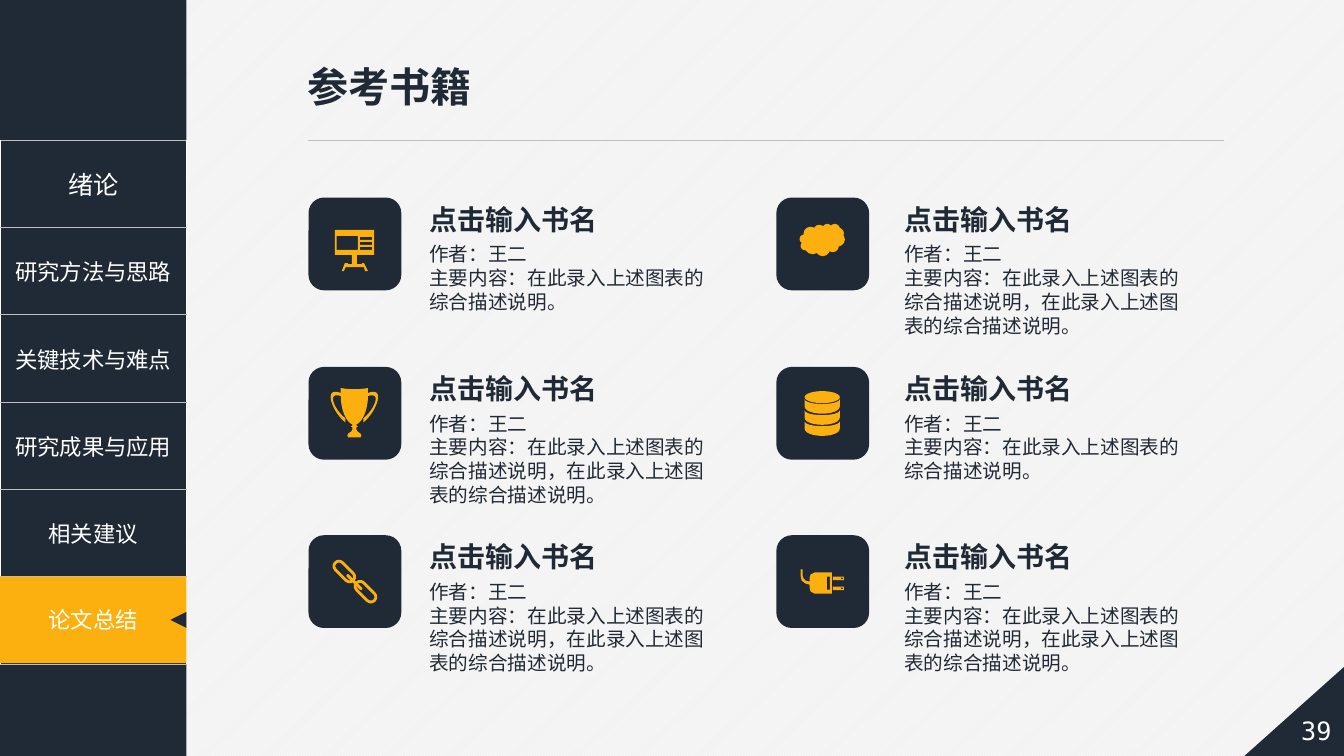
from lxml import etree
from pptx import Presentation
from pptx.dml.color import RGBColor
from pptx.enum.dml import MSO_PATTERN
from pptx.enum.shapes import MSO_CONNECTOR, MSO_SHAPE
from pptx.enum.text import MSO_ANCHOR, MSO_AUTO_SIZE, PP_ALIGN
from pptx.oxml.ns import qn
from pptx.util import Inches, Pt

RECT, ROUND = MSO_SHAPE.RECTANGLE, MSO_SHAPE.ROUNDED_RECTANGLE
OVAL, CLOUD = MSO_SHAPE.OVAL, MSO_SHAPE.CLOUD
TRIANGLE, CORNER = MSO_SHAPE.ISOSCELES_TRIANGLE, MSO_SHAPE.RIGHT_TRIANGLE
LEFT, CENTER = PP_ALIGN.LEFT, PP_ALIGN.CENTER
TOP, MIDDLE = MSO_ANCHOR.TOP, MSO_ANCHOR.MIDDLE

NAVY, GOLD, GREY, WHITE, PALE = "202A36", "FCB00F", "BFBFBF", "FFFFFF", "F2F2F2"
SANS, MONO = "Noto Sans CJK SC", "DejaVu Sans Mono"

MENU = ["绪论", "研究方法与思路", "关键技术与难点", "研究成果与应用", "相关建议", "论文总结"]
SHORT = "主要内容：在此录入上述图表的综合描述说明。"
LONG = "主要内容：在此录入上述图表的综合描述说明，在此录入上述图表的综合描述说明。"


def color(code):
    return RGBColor.from_string(code)


# Text
def style(frame, size, code, face=SANS, bold=False, align=LEFT, pitch=None):
    for para in frame.paragraphs:
        para.alignment = align
        para.line_spacing = pitch
        for run in para.runs:
            font = run.font
            font.size, font.bold, font.name = Pt(size), bold, face
            font.color.rgb = color(code)
            east = etree.SubElement(font._element, qn("a:ea"))
            east.set("typeface", SANS)


def write(slide, text, x, y, w, h, size, wrap=True, **look):
    frame = slide.shapes.add_textbox(
        Inches(x), Inches(y), Inches(w), Inches(h)).text_frame
    frame.text, frame.word_wrap = text, wrap
    style(frame, size, NAVY, **look)


# Shapes
def paint(shape, fill):
    shape.fill.solid()
    shape.fill.fore_color.rgb = color(fill)
    shape.line.fill.background()
    shape.shadow.inherit = False
    return shape


def block(shapes, kind, x, y, w, h, fill, turn=0):
    shape = shapes.add_shape(kind, Inches(x), Inches(y), Inches(w), Inches(h))
    shape.rotation = turn
    return paint(shape, fill)


def trace(shapes, x, y, *loops):
    """Fill closed loops given in hundredths of an inch from (x, y)."""
    loops = [[(px * 10, py * 10) for px, py in loop] for loop in loops]
    pen = shapes.build_freeform(*loops[0][0], scale=Inches(1) / 1000)
    pen.add_line_segments(loops[0][1:])
    for loop in loops[1:]:
        pen.move_to(*loop[0])
        pen.add_line_segments(loop[1:])
    paint(pen.convert_to_shape(Inches(x), Inches(y)), GOLD)


def box(x1, y1, x2, y2):
    return [(x1, y1), (x2, y1), (x2, y2), (x1, y2)]


def bend(a, b, c, d, steps=12):
    spots = []
    for i in range(steps + 1):
        t = i / steps
        u = 1 - t
        spots.append(tuple(
            u**3 * p + 3 * u * u * t * q + 3 * u * t * t * r + t**3 * s
            for p, q, r, s in zip(a, b, c, d)))
    return spots


# Icons, each placed from the corner of its badge
def board(shapes, x, y):
    frame = [(65, 57), (65, 32), (26, 32), (26, 57), (43, 57), (43, 66), (39, 66),
             (39, 65), (36, 65), (33, 73), (35, 73), (37, 69), (55, 69), (56, 73),
             (59, 73), (55, 65), (53, 65), (53, 66), (48, 66), (48, 57)]
    lines = [box(51, top, 63, top + 3) for top in (39, 44, 49)]
    trace(shapes, x, y, frame, box(28, 38, 49, 52), *lines)


def cloud(shapes, x, y):
    block(shapes, CLOUD, x + 0.23, y + 0.26, 0.45, 0.32, GOLD)


def trophy(shapes, x, y):
    def place(half, side):
        return [(45.5 + side * px, py) for px, py in half]

    cup = [(13.5, 21)] + bend((13.5, 29), (13.5, 42), (8, 55), (2, 57))
    cup += [(2, 58), (3.5, 59), (2, 60), (2, 62), (3, 64), (6, 66), (7, 68), (6, 70)]
    rim = bend((-13.5, 21), (-5, 22.5), (5, 22.5), (13.5, 21))
    trace(shapes, x, y, place(rim, 1) + place(cup, 1) + place(cup[::-1], -1))
    grip = bend((13, 26), (32, 18), (22, 45), (9, 55))
    grip += bend((9, 51), (20, 42), (28, 24), (13, 29))
    for side in (1, -1):
        trace(shapes, x, y, place(grip, side))


def disks(shapes, x, y):
    block(shapes, OVAL, x + 0.28, y + 0.24, 0.35, 0.12, GOLD)
    for top in (32, 43, 54):
        upper = bend((63, top), (62, top + 6.5), (29, top + 6.5), (28, top))
        low = top + 7
        lower = bend((28, low), (28, low + 10), (63, low + 10), (63, low))
        trace(shapes, x, y, upper + lower)


def chain(shapes, x, y):
    for dx, dy in ((0.23, 0.31), (0.44, 0.51)):
        link = block(shapes, ROUND, x + dx, y + dy, 0.25, 0.1, NAVY, 45)
        link.adjustments[0] = 0.5
        link.line.color.rgb = color(GOLD)
        link.line.width = Pt(2)
    bar = block(shapes, ROUND, x + 0.35, y + 0.45, 0.21, 0.03, GOLD, 45)
    bar.adjustments[0] = 0.5


def plug(shapes, x, y):
    body = [(55, 37), (38, 37), (34, 39), (33, 42), (33, 46), (29, 45), (27, 43),
            (26, 40), (26, 34), (24, 34), (24, 40), (25, 45), (29, 48), (33, 49),
            (33, 52), (34, 56), (38, 58), (55, 58)]
    trace(shapes, x, y, body, box(50, 41, 53, 54))
    for top in (41, 51):
        trace(shapes, x, y, box(56, top, 67, top + 3.5),
              box(64, top + 1, 66, top + 2.5))


# Parts of the slide
def edge(cell):
    props = cell._tc.get_or_add_tcPr()
    for i, tag in enumerate(("a:lnT", "a:lnB")):
        line = etree.Element(qn(tag), w=str(Pt(1)))
        fill = etree.SubElement(line, qn("a:solidFill"))
        etree.SubElement(fill, qn("a:srgbClr"), val=GREY)
        props.insert(i, line)


def sidebar(slide):
    shapes = slide.shapes
    block(shapes, RECT, 0, 0, 1.85, 7.5, NAVY)
    table = shapes.add_table(len(MENU), 1, 0, Inches(1.39), Inches(1.85),
                             Inches(5.2)).table
    table.first_row = table.horz_banding = False
    for i, name in enumerate(MENU):
        cell = table.cell(i, 0)
        cell.text, cell.vertical_anchor = name, MIDDLE
        cell.fill.background()
        style(cell.text_frame, 16 if i else 18, WHITE, align=CENTER)
        edge(cell)
    # Current chapter
    frame = block(shapes, RECT, 0, 5.72, 1.85, 0.86, GOLD).text_frame
    frame.text, frame.vertical_anchor = MENU[-1], MIDDLE
    style(frame, 16, WHITE, align=CENTER)
    block(shapes, TRIANGLE, 1.69, 6.07, 0.16, 0.16, NAVY, 270)


def header(slide):
    title = slide.shapes.title
    title.left, title.top = Inches(2.95), Inches(0.56)
    title.width, title.height = Inches(1.85), Inches(0.59)
    frame = title.text_frame
    frame.text, frame.word_wrap = "参考书籍", False
    frame.auto_size, frame.vertical_anchor = MSO_AUTO_SIZE.NONE, TOP
    style(frame, 29.3, NAVY, face="Arial", bold=True, pitch=Pt(35))
    rule = slide.shapes.add_connector(MSO_CONNECTOR.STRAIGHT, Inches(3.05),
                                      Inches(1.39), Inches(12.14), Inches(1.39))
    rule.line.color.rgb, rule.line.width = color(GREY), Pt(0.5)
    etree.SubElement(rule._element.spPr, qn("a:effectLst"))


def footer(slide):
    block(slide.shapes, CORNER, 12.38, 6.53, 0.93, 1.04, NAVY, 270)
    frame = slide.shapes.add_textbox(Inches(12.73), Inches(6.97), Inches(0.65),
                                     Inches(0.55)).text_frame
    frame.text, frame.vertical_anchor = "39", MIDDLE
    style(frame, 18, WHITE, face=MONO, align=CENTER)


def book(slide, icon, about, x, y, left):
    group = slide.shapes.add_group_shape().shapes
    block(group, ROUND, x, y, 0.92, 0.92, NAVY)
    icon(group, x, y)
    write(slide, "点击输入书名", left, y - 0.01, 1.88, 0.44, 20, wrap=False,
          bold=True, pitch=Pt(24.5))
    write(slide, "作者：王二\n" + about, left, y + 0.39, 2.97,
          0.81 if about == SHORT else 1.04, 14, pitch=Pt(17))


def main():
    deck = Presentation()
    deck.slide_width, deck.slide_height = Inches(13.33), Inches(7.5)
    slide = deck.slides.add_slide(deck.slide_layouts[5])
    fill = slide.background.fill
    fill.patterned()
    fill.pattern = MSO_PATTERN.LIGHT_UPWARD_DIAGONAL
    fill.fore_color.rgb, fill.back_color.rgb = color(WHITE), color(PALE)
    sidebar(slide)
    header(slide)
    footer(slide)
    # Books, one column after the other
    sides = [(3.06, 4.16, [(board, SHORT), (trophy, LONG), (chain, LONG)]),
             (7.7, 8.87, [(cloud, LONG), (disks, SHORT), (plug, LONG)])]
    for x, left, books in sides:
        for y, (icon, about) in zip((1.96, 3.64, 5.31), books):
            book(slide, icon, about, x, y, left)
    deck.save("out.pptx")


if __name__ == "__main__":
    main()
